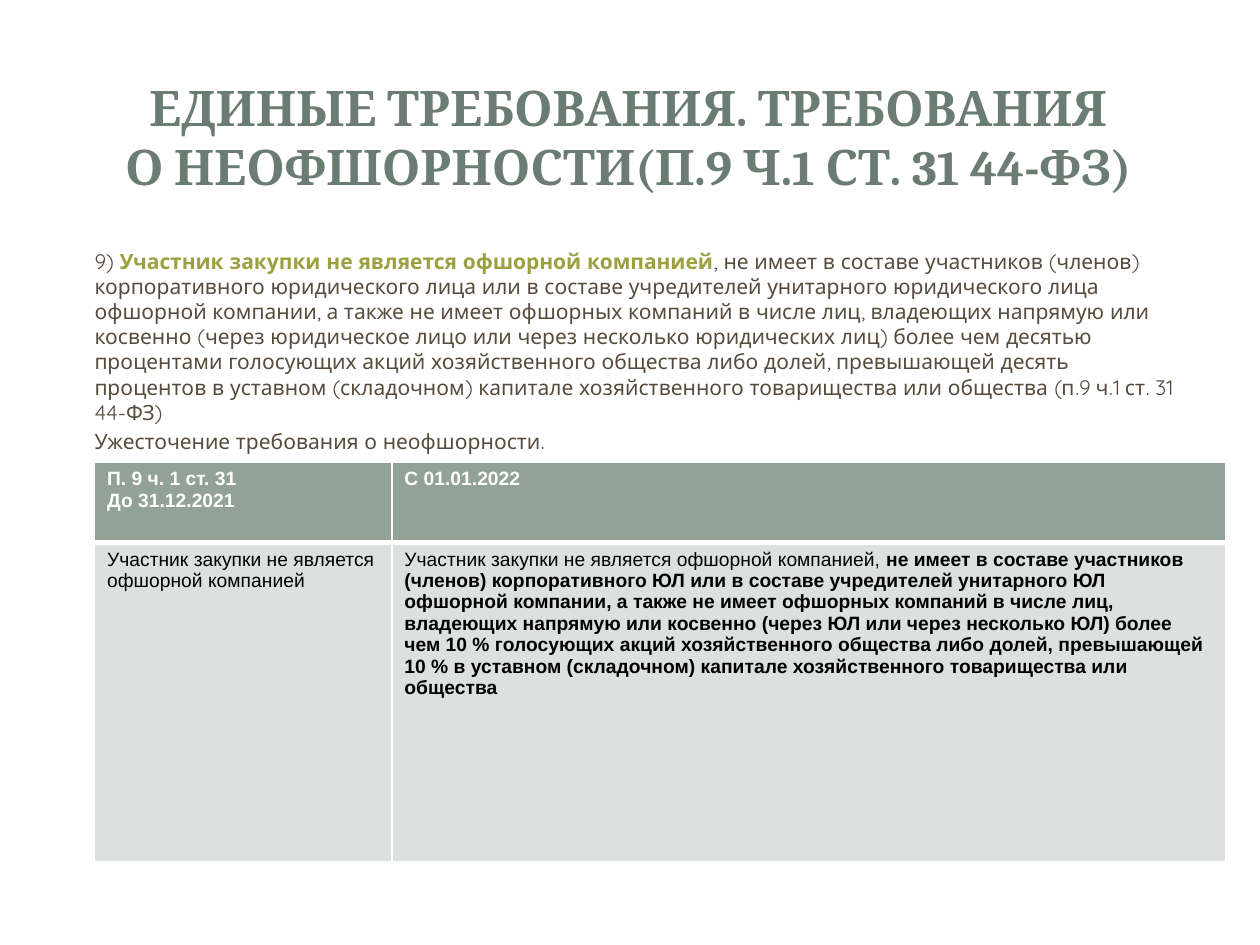
"""Builds a slide on the offshore rules for bidders, with a before and after table."""
from typing import NamedTuple

from lxml import etree
from pptx import Presentation, util as u
from pptx.dml.color import RGBColor
from pptx.enum import shapes, text
from pptx.oxml.ns import qn

WHITE = RGBColor(0xFF, 0xFF, 0xFF)
BLACK = RGBColor(0, 0, 0)
GREEN = RGBColor(0x6B, 0x7D, 0x72)
BROWN = RGBColor(0x56, 0x4B, 0x3C)
OLIVE = RGBColor(0x9D, 0xA0, 0x3F)
SAGE = RGBColor(0x93, 0xA2, 0x99)
PALE = RGBColor(0xDC, 0xE0, 0xDE)

WIDE, HIGH = u.Inches(10), u.Inches(7.5)


class Box(NamedTuple):
    """Place and size as shares of the slide."""
    x: float
    y: float
    w: float
    h: float

    def spots(self) -> tuple:
        """Return left, top, width and height as lengths."""
        return (int(self.x * WIDE), int(self.y * HIGH),
                int(self.w * WIDE), int(self.h * HIGH))


class Panel(NamedTuple):
    """A white backing panel with its opacity in percent."""
    kind: shapes.MSO_SHAPE
    box: Box
    alpha: int = 100


class Run(NamedTuple):
    """A piece of text with its colour and weight."""
    words: str
    tint: RGBColor
    bold: bool = False


class Style(NamedTuple):
    """Font and paragraph format of a block of text."""
    font: dict
    para: dict


class Cell(NamedTuple):
    """Paragraphs, fill and border widths of a table cell."""
    paras: list
    fill: RGBColor
    edges: dict


PANELS = [
    Panel(shapes.MSO_SHAPE.ROUNDED_RECTANGLE, Box(0.01, 0.015, 0.98, 0.972)),
    Panel(shapes.MSO_SHAPE.RECTANGLE, Box(0.03, 0.04, 0.94, 0.193), 83),
    Panel(shapes.MSO_SHAPE.RECTANGLE, Box(0.041, 0.055, 0.917, 0.163)),
]

HEAD = Style({"name": "Cambria", "size": u.Pt(28)},
             {"alignment": text.PP_ALIGN.CENTER, "line_spacing": 1.0})
BODY = Style({"name": "Quicksand", "size": u.Pt(12)},
             {"line_spacing": 1.0, "space_before": u.Pt(2.4)})
GRID = Style({"name": "Arial", "size": u.Pt(11)}, {})

TITLE = [[Run("ЕДИНЫЕ ТРЕБОВАНИЯ. ТРЕБОВАНИЯ\vО НЕОФШОРНОСТИ(П.9 Ч.1 СТ. 31 44-ФЗ)", GREEN, True)]]
RULE = [
    [Run("9) ", BROWN),
     Run("Участник закупки не является офшорной компанией", OLIVE, True),
     Run(", не имеет в составе участников (членов) корпоративного юридического лица или "
         "в составе учредителей унитарного юридического лица офшорной компании, а также "
         "не имеет офшорных компаний в числе лиц, владеющих напрямую или косвенно (через "
         "юридическое лицо или через несколько юридических лиц) более чем десятью "
         "процентами голосующих акций хозяйственного общества либо долей, превышающей "
         "десять процентов в уставном (складочном) капитале хозяйственного товарищества "
         "или общества (п.9 ч.1 ст. 31 44-ФЗ)", BROWN)],
    [Run("Ужесточение требования о неофшорности.", BROWN)],
]

TOP = {"lnL": 1, "lnR": 1, "lnT": 1, "lnB": 3}
LOW = {"lnL": 1, "lnR": 1, "lnT": 3, "lnB": 1}
CELLS = [
    [Cell([[Run("П. 9 ч. 1 ст. 31", WHITE, True)],
           [Run("До 31.12.2021", WHITE, True)]], SAGE, TOP),
     Cell([[Run("С 01.01.2022", WHITE, True)]], SAGE, TOP)],
    [Cell([[Run("Участник закупки не является офшорной компанией", BLACK)]], PALE, LOW),
     Cell([[Run("Участник закупки не является офшорной компанией, ", BLACK),
            Run("не имеет в составе участников (членов) корпоративного ЮЛ или в составе "
                "учредителей унитарного ЮЛ офшорной компании, а также не имеет офшорных "
                "компаний в числе лиц,", BLACK, True)],
           [Run("владеющих напрямую или косвенно (через ЮЛ или через несколько ЮЛ) более "
                "чем 10 % голосующих акций хозяйственного общества либо долей, "
                "превышающей 10 % в уставном (складочном) капитале хозяйственного "
                "товарищества или общества", BLACK, True)]], PALE, LOW)],
]
COLS = (0.236, 0.662)
ROWS = (0.085, 0.338)


def put(item: object, form: dict) -> None:
    """Set each attribute named in the format."""
    for key, val in form.items():
        setattr(item, key, val)


def back(slide: object, panel: Panel) -> None:
    """Add a white panel without an outline."""
    shape = slide.shapes.add_shape(panel.kind, *panel.box.spots())
    shape.shadow.inherit = False
    shape.line.fill.background()
    shape.fill.solid()
    shape.fill.fore_color.rgb = WHITE
    if len(shape.adjustments):
        shape.adjustments[0] = 0.02
    if panel.alpha < 100:
        tint = shape._element.spPr.find(qn("a:solidFill"))[0]
        etree.SubElement(tint, qn("a:alpha"), val=str(panel.alpha * 1000))


def write(frame: object, paras: list, style: Style) -> None:
    """Fill a text frame with styled paragraphs."""
    for n, runs in enumerate(paras):
        para = frame.paragraphs[0] if n == 0 else frame.add_paragraph()
        put(para, style.para)
        for run in runs:
            for k, line in enumerate(run.words.split("\v")):
                if k:
                    para.add_line_break()
                part = para.add_run()
                part.text = line
                put(part.font, {**style.font, "bold": run.bold})
                part.font.color.rgb = run.tint


def edge(cell: object, edges: dict) -> None:
    """Draw the white borders of a cell."""
    props = cell._tc.get_or_add_tcPr()
    for side, width in edges.items():
        line = etree.SubElement(props, qn(f"a:{side}"), w=str(u.Pt(width)))
        fill = etree.SubElement(line, qn("a:solidFill"))
        etree.SubElement(fill, qn("a:srgbClr"), val=str(WHITE))


def chart(slide: object, box: Box) -> None:
    """Add the table that compares the two wordings."""
    table = slide.shapes.add_table(len(ROWS), len(COLS), *box.spots()).table
    for col, share in zip(table.columns, COLS):
        col.width = int(share * WIDE)
    for row, share, cells in zip(table.rows, ROWS, CELLS):
        row.height = int(share * HIGH)
        for cell, data in zip(row.cells, cells):
            edge(cell, data.edges)
            cell.fill.solid()
            cell.fill.fore_color.rgb = data.fill
            write(cell.text_frame, data.paras, GRID)


def main() -> None:
    """Build and save the slide."""
    deck = Presentation()
    put(deck, {"slide_width": WIDE, "slide_height": HIGH})
    slide = deck.slides.add_slide(deck.slide_layouts[5])
    for panel in PANELS:
        back(slide, panel)

    title = slide.shapes.title
    slide.shapes._spTree.append(title._element)
    spots = Box(0.047, 0.06, 0.903, 0.168).spots()
    put(title, dict(zip(("left", "top", "width", "height"), spots)))
    put(title.text_frame, {"word_wrap": True, "auto_size": text.MSO_AUTO_SIZE.NONE,
                           "vertical_anchor": text.MSO_ANCHOR.MIDDLE})
    write(title.text_frame, TITLE, HEAD)

    body = slide.shapes.add_textbox(*Box(0.05, 0.256, 0.899, 0.717).spots())
    put(body.text_frame, {"word_wrap": True, "margin_left": u.Inches(0.25)})
    write(body.text_frame, RULE, BODY)

    chart(slide, Box(0.075, 0.489, sum(COLS), sum(ROWS)))
    deck.save("out.pptx")


if __name__ == "__main__":
    main()
